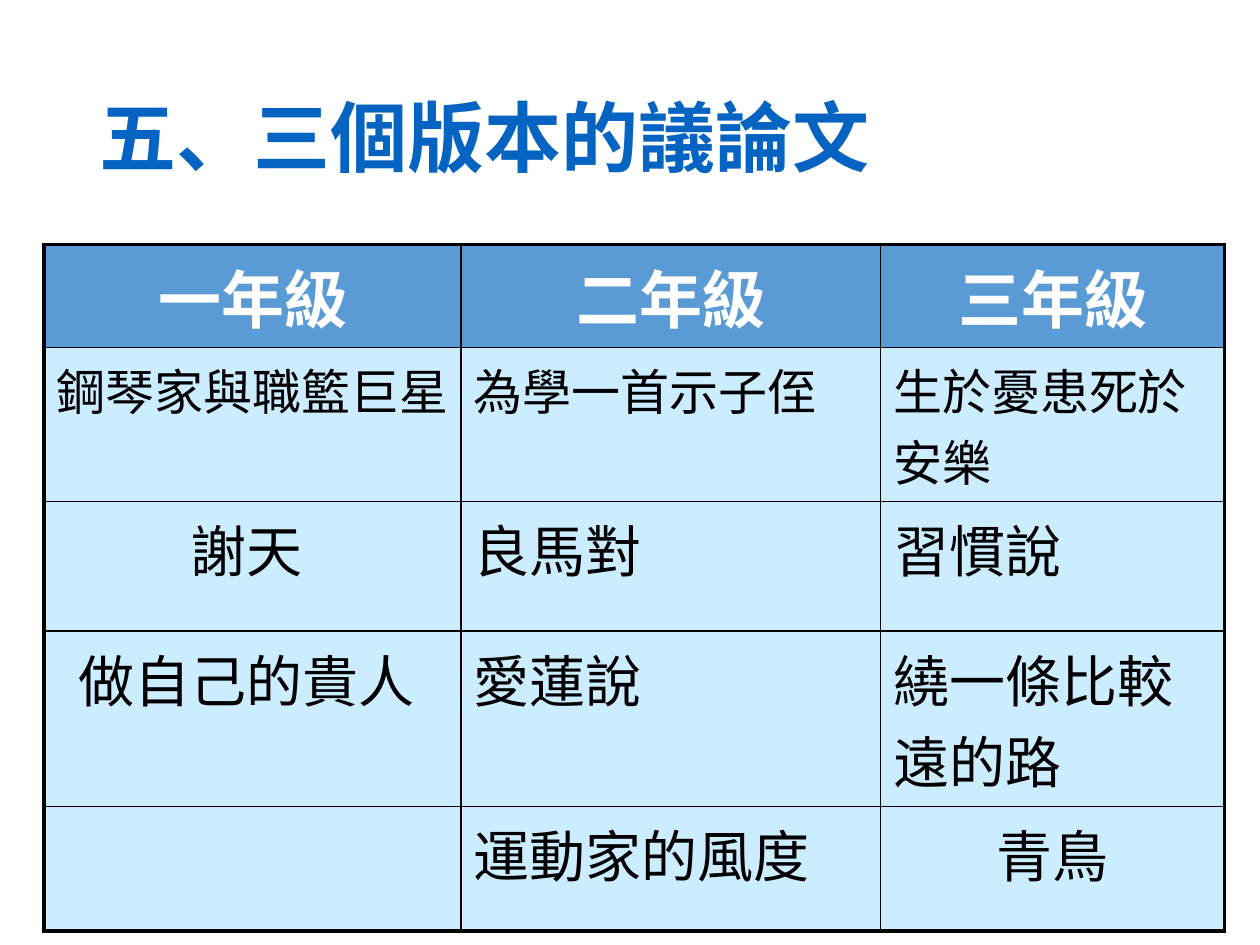
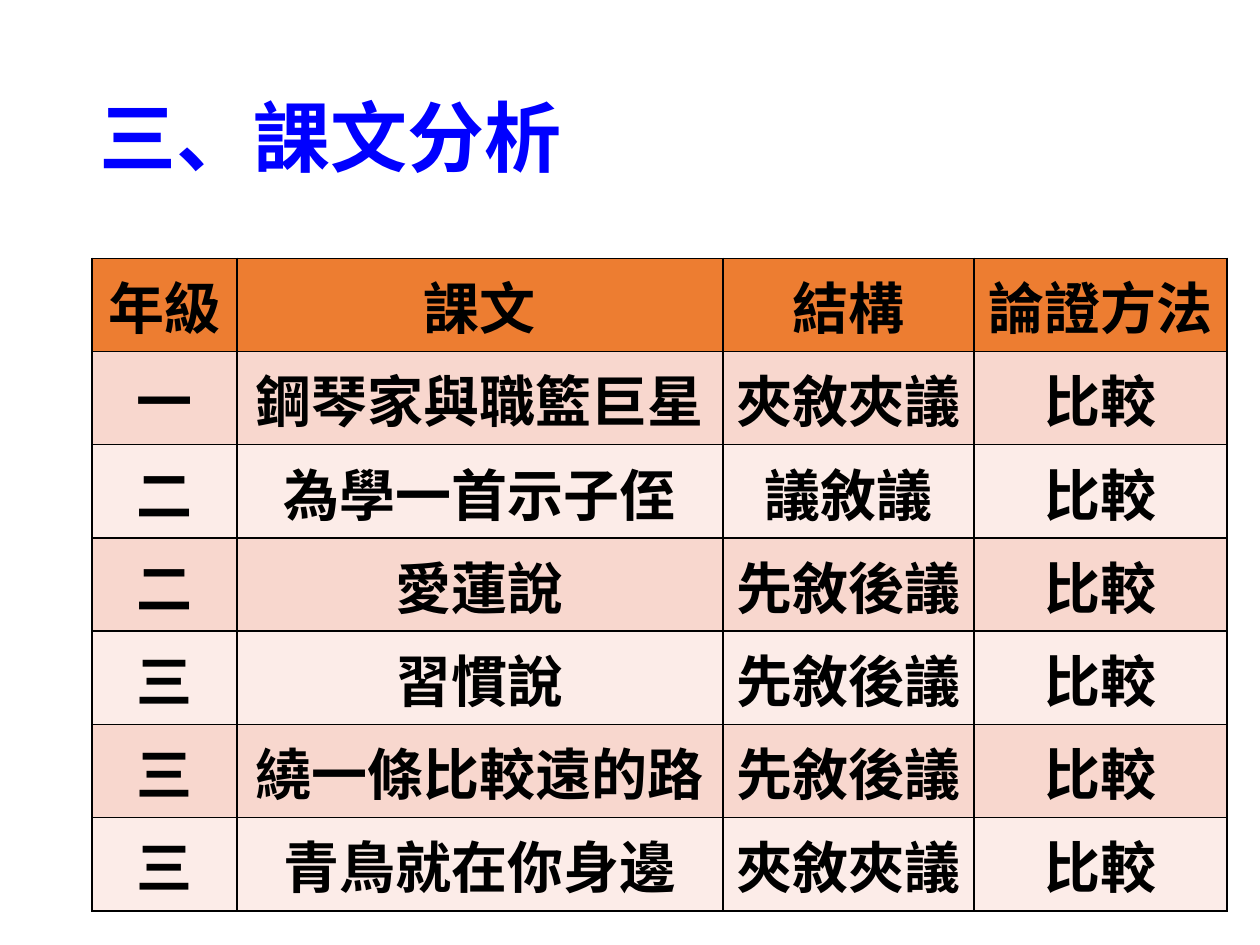
from lxml.etree import SubElement
from pptx import Presentation
from pptx.dml.color import RGBColor
from pptx.enum.text import MSO_ANCHOR, PP_ALIGN
from pptx.oxml.ns import qn
from pptx.util import Inches, Pt

WHITE = RGBColor(0xFF, 0xFF, 0xFF)
BLACK = RGBColor(0x00, 0x00, 0x00)
TITLE_BLUE = RGBColor(0x05, 0x63, 0xC1)
PURE_BLUE = RGBColor(0x00, 0x00, 0xFF)
HEADER_BLUE = RGBColor(0x5B, 0x9B, 0xD5)
PALE_BLUE = RGBColor(0xCC, 0xEC, 0xFF)
ORANGE = RGBColor(0xED, 0x7D, 0x31)
BAND_DARK = RGBColor(0xF8, 0xD7, 0xCE)
BAND_LIGHT = RGBColor(0xFC, 0xEC, 0xE8)

CJK_FONT = "Noto Sans CJK SC"
LATIN_FONT = "Calibri"
TITLE_BOX = (0.69, 0.4, 8.62, 1.45)
THIN, THICK = 1, 2.25

GRADE_HEADERS = ["一年級", "二年級", "三年級"]
GRADE_ROWS = [
    ["鋼琴家與職籃巨星", "為學一首示子侄", "生於憂患死於安樂"],
    ["謝天 ", "良馬對", "習慣說"],
    ["做自己的貴人 ", "愛蓮說", "繞一條比較遠的路"],
    ["", "運動家的風度", "青鳥"],
]
CENTERED_LESSONS = {"謝天 ", "做自己的貴人 ", "青鳥"}

ANALYSIS_HEADERS = ["年級", "課文", "結構", "論證方法"]
ANALYSIS_ROWS = [
    ["一", "鋼琴家與職籃巨星", "夾敘夾議"],
    ["二", "為學一首示子侄", "議敘議"],
    ["二", "愛蓮說", "先敘後議"],
    ["三", "習慣說", "先敘後議"],
    ["三", "繞一條比較遠的路", "先敘後議"],
    ["三", "青鳥就在你身邊", "夾敘夾議"],
]
COMMON_METHOD = "比較"


def style_paragraph(paragraph, size, color, bold, font_name=CJK_FONT):
    font = paragraph.font
    font.size = Pt(size)
    font.bold = bold
    font.color.rgb = color
    font.name = font_name
    defaults = paragraph._p.pPr.find(qn("a:defRPr"))
    SubElement(defaults, qn("a:ea")).set("typeface", CJK_FONT)


def add_title(slide, box, text, color):
    text_box = slide.shapes.add_textbox(*map(Inches, box))
    frame = text_box.text_frame
    frame.word_wrap = True
    frame.vertical_anchor = MSO_ANCHOR.MIDDLE
    paragraph = frame.paragraphs[0]
    paragraph.text = text
    paragraph.line_spacing = 0.9
    style_paragraph(paragraph, 44, color, True)


def add_grid(slide, left, top, widths, heights):
    box = (left, top, sum(widths), sum(heights))
    frame = slide.shapes.add_table(len(heights), len(widths), *map(Inches, box))
    table = frame.table
    for column, width in zip(table.columns, widths):
        column.width = Inches(width)
    for row, height in zip(table.rows, heights):
        row.height = Inches(height)
    return table


def set_borders(table, outer_width):
    last_row, last_column = len(table.rows) - 1, len(table.columns) - 1
    for row in range(last_row + 1):
        for column in range(last_column + 1):
            properties = table.cell(row, column)._tc.get_or_add_tcPr()
            on_edge = {
                "a:lnL": column == 0,
                "a:lnR": column == last_column,
                "a:lnT": row == 0,
                "a:lnB": row == last_row,
            }
            for tag, is_outer in on_edge.items():
                line = SubElement(properties, qn(tag))
                line.set("w", str(Pt(outer_width if is_outer else THIN)))
                fill = SubElement(line, qn("a:solidFill"))
                SubElement(fill, qn("a:srgbClr")).set("val", str(BLACK))


def fill_cell(cell, text, fill, size, color=BLACK, bold=False,
              align=PP_ALIGN.CENTER, font_name=CJK_FONT):
    cell.fill.solid()
    cell.fill.fore_color.rgb = fill
    paragraph = cell.text_frame.paragraphs[0]
    paragraph.text = text
    paragraph.alignment = align
    style_paragraph(paragraph, size, color, bold, font_name)


def add_grade_table(slide, left, top):
    table = add_grid(slide, left, top, [3.31, 3.33, 2.73], [0.82, 1.22, 1.03, 1.39, 0.99])
    set_borders(table, THICK)
    for column, header in enumerate(GRADE_HEADERS):
        fill_cell(table.cell(0, column), header, HEADER_BLUE, 36, WHITE, True,
                  font_name=LATIN_FONT)
    for row, lessons in enumerate(GRADE_ROWS, 1):
        for column, lesson in enumerate(lessons):
            align = PP_ALIGN.CENTER if lesson in CENTERED_LESSONS else PP_ALIGN.LEFT
            font_name = CJK_FONT if lesson == "良馬對" else LATIN_FONT
            fill_cell(table.cell(row, column), lesson, PALE_BLUE, 28 if row == 1 else 32,
                      align=align, font_name=font_name)


def add_analysis_table(slide, left, top):
    rows = [ANALYSIS_HEADERS] + [row + [COMMON_METHOD] for row in ANALYSIS_ROWS]
    table = add_grid(slide, left, top, [1.15, 3.86, 1.99, 2.01], [0.74] * len(rows))
    set_borders(table, THIN)
    for row, texts in enumerate(rows):
        band = BAND_DARK if row % 2 else BAND_LIGHT
        for column, text in enumerate(texts):
            fill_cell(table.cell(row, column), text, band if row else ORANGE, 32, bold=True)


def main():
    presentation = Presentation()
    presentation.slide_width = Inches(10)
    presentation.slide_height = Inches(7.5)
    blank = presentation.slide_layouts[6]

    slide = presentation.slides.add_slide(blank)
    add_title(slide, TITLE_BOX, "五、三個版本的議論文", TITLE_BLUE)
    add_grade_table(slide, 0.35, 1.94)

    slide = presentation.slides.add_slide(blank)
    add_title(slide, TITLE_BOX, "三、課文分析", PURE_BLUE)
    add_analysis_table(slide, 0.73, 2.05)

    presentation.save("out.pptx")


if __name__ == "__main__":
    main()
